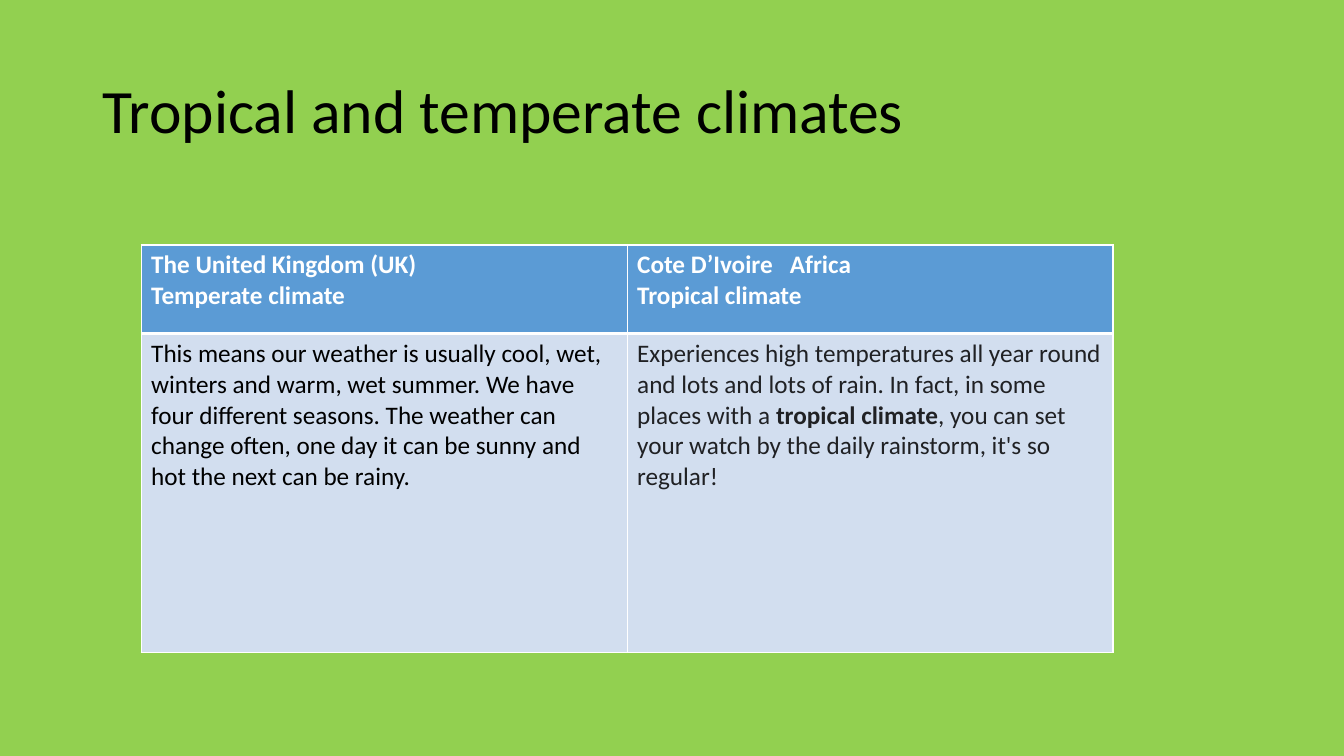
from pptx import Presentation
from pptx.dml.color import RGBColor
from pptx.enum.text import MSO_ANCHOR
from pptx.oxml import parse_xml
from pptx.oxml.ns import nsdecls
from pptx.util import Inches, Pt

FONT = "Calibri"


def color(code):
    return RGBColor.from_string(code)


def set_borders(cell, widths):
    """Draw white cell borders; widths maps each side to points."""
    properties = cell._tc.get_or_add_tcPr()
    for index, (side, width) in enumerate(widths.items()):
        line = parse_xml(
            f'<a:ln{side} {nsdecls("a")} w="{Pt(width)}"><a:solidFill>'
            f'<a:srgbClr val="FFFFFF"/></a:solidFill></a:ln{side}>')
        properties.insert(index, line)


# Slide and background
deck = Presentation()
deck.slide_width, deck.slide_height = Inches(13.33), Inches(7.5)
page = deck.slides.add_slide(deck.slide_layouts[6])
page.background.fill.solid()
page.background.fill.fore_color.rgb = color("92D050")

# Title
title = page.shapes.add_textbox(Inches(0.92), Inches(0.4), Inches(11.91), Inches(1.45))
title.text_frame.word_wrap = True
title.text_frame.vertical_anchor = MSO_ANCHOR.MIDDLE
para = title.text_frame.paragraphs[0]
para.text = "Tropical and temperate climates"
para.line_spacing = 0.9
para.font.name, para.font.size = FONT, Pt(44)
para.font.color.rgb = color("000000")

# Climate comparison: each cell is a list of paragraphs, each a list of (text, bold)
climates = [
    [
        [[("The United Kingdom (UK)", True)], [("Temperate climate", True)]],
        [[("Cote D’Ivoire   Africa", True)], [("Tropical climate", True)]],
    ],
    [
        [[("This means our weather is usually cool, wet, winters and warm, wet summer. "
           "We have four different seasons. The weather can change often, one day it "
           "can be sunny and hot the next can be rainy.", False)]],
        [[("Experiences high temperatures all year round and lots and lots of rain. "
           "In fact, in some places with a ", False),
          ("tropical climate", True),
          (", you can set your watch by the daily rainstorm, it's so regular!", False)]],
    ],
]
row_heights = [0.88, 3.16]
row_fills = ["5B9BD5", "D2DEEF"]
text_colors = [["FFFFFF", "FFFFFF"], ["000000", "202124"]]
row_borders = [{"L": 1, "R": 1, "T": 1, "B": 3}, {"L": 1, "R": 1, "T": 3, "B": 1}]

table = page.shapes.add_table(
    2, 2, Inches(1.4), Inches(2.43), Inches(9.65), Inches(4.04)).table
for column in table.columns:
    column.width = Inches(4.82)

for r, row in enumerate(climates):
    table.rows[r].height = Inches(row_heights[r])
    for c, paragraphs in enumerate(row):
        cell = table.cell(r, c)
        cell.fill.solid()
        cell.fill.fore_color.rgb = color(row_fills[r])
        set_borders(cell, row_borders[r])
        for number, spans in enumerate(paragraphs):
            frame = cell.text_frame
            para = frame.add_paragraph() if number else frame.paragraphs[0]
            para.font.name, para.font.size = FONT, Pt(18)
            para.font.color.rgb = color(text_colors[r][c])
            for text, bold in spans:
                span = para.add_run()
                span.text = text
                span.font.bold = bold

deck.save("out.pptx")
